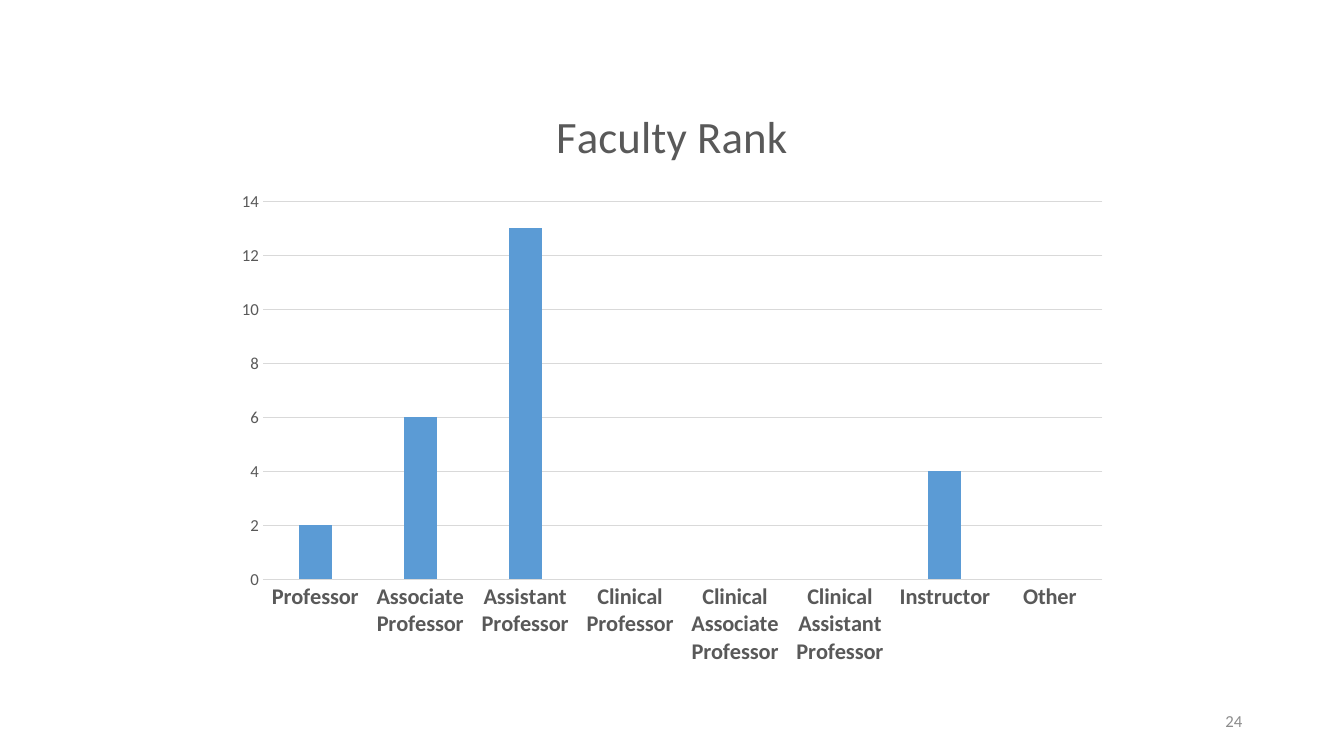
from dataclasses import dataclass

from pptx import Presentation
from pptx.chart.data import CategoryChartData
from pptx.dml.color import RGBColor
from pptx.enum.chart import XL_CHART_TYPE, XL_TICK_MARK
from pptx.enum.text import MSO_ANCHOR, PP_ALIGN
from pptx.util import Inches, Pt


@dataclass(frozen=True)
class Theme:
    font: str = "Calibri"
    text: str = "595959"
    muted: str = "8C8C8C"
    grid: str = "D9D9D9"
    bar: str = "5B9BD5"
    title_size: int = 32
    rank_size: int = 16
    small_size: int = 12
    base_size: int = 10
    line_width: float = 0.75


THEME = Theme()

FACULTY_BY_RANK = {
    "Professor": 2,
    "Associate Professor": 6,
    "Assistant Professor": 13,
    "Clinical Professor": None,
    "Clinical Associate Professor": None,
    "Clinical Assistant Professor": None,
    "Instructor": 4,
    "Other": None,
}


def style_font(font, size, color, bold=False):
    font.name = THEME.font
    font.size = Pt(size)
    font.bold = bold
    font.color.rgb = RGBColor.from_string(color)


def style_line(line):
    line.color.rgb = RGBColor.from_string(THEME.grid)
    line.width = Pt(THEME.line_width)


def style_axis(axis, size, bold=False):
    axis.major_tick_mark = XL_TICK_MARK.NONE
    axis.minor_tick_mark = XL_TICK_MARK.NONE
    style_font(axis.tick_labels.font, size, THEME.text, bold)


def add_rank_chart(slide):
    ranks = CategoryChartData()
    ranks.categories = list(FACULTY_BY_RANK)
    ranks.add_series("Series 1", list(FACULTY_BY_RANK.values()))
    chart = slide.shapes.add_chart(
        XL_CHART_TYPE.COLUMN_CLUSTERED,
        Inches(2.22), Inches(0.79), Inches(8.89), Inches(5.93), ranks,
    ).chart
    chart.has_legend = False
    style_font(chart.font, THEME.base_size, "000000")

    # Title
    chart.has_title = True
    title = chart.chart_title.text_frame
    title.text = "Faculty Rank"
    style_font(title.paragraphs[0].font, THEME.title_size, THEME.text)

    # Axes
    style_axis(chart.category_axis, THEME.rank_size, bold=True)
    style_line(chart.category_axis.format.line)
    counts = chart.value_axis
    style_axis(counts, THEME.small_size)
    counts.format.line.fill.background()
    counts.minimum_scale, counts.maximum_scale, counts.major_unit = 0, 14, 2
    style_line(counts.major_gridlines.format.line)

    # Columns
    columns = chart.plots[0]
    columns.vary_by_categories = False
    columns.gap_width = 219
    columns.overlap = -27
    fill = columns.series[0].format.fill
    fill.solid()
    fill.fore_color.rgb = RGBColor.from_string(THEME.bar)


def add_page_number(slide, number):
    frame = slide.shapes.add_textbox(
        Inches(9.42), Inches(6.95), Inches(3), Inches(0.4)).text_frame
    frame.word_wrap = True
    frame.vertical_anchor = MSO_ANCHOR.MIDDLE
    paragraph = frame.paragraphs[0]
    paragraph.text = number
    paragraph.alignment = PP_ALIGN.RIGHT
    style_font(paragraph.font, THEME.small_size, THEME.muted)


def main():
    deck = Presentation()
    deck.slide_width, deck.slide_height = Inches(13.33), Inches(7.5)
    slide = deck.slides.add_slide(deck.slide_layouts[6])
    add_rank_chart(slide)
    add_page_number(slide, "24")
    deck.save("out.pptx")


if __name__ == "__main__":
    main()
